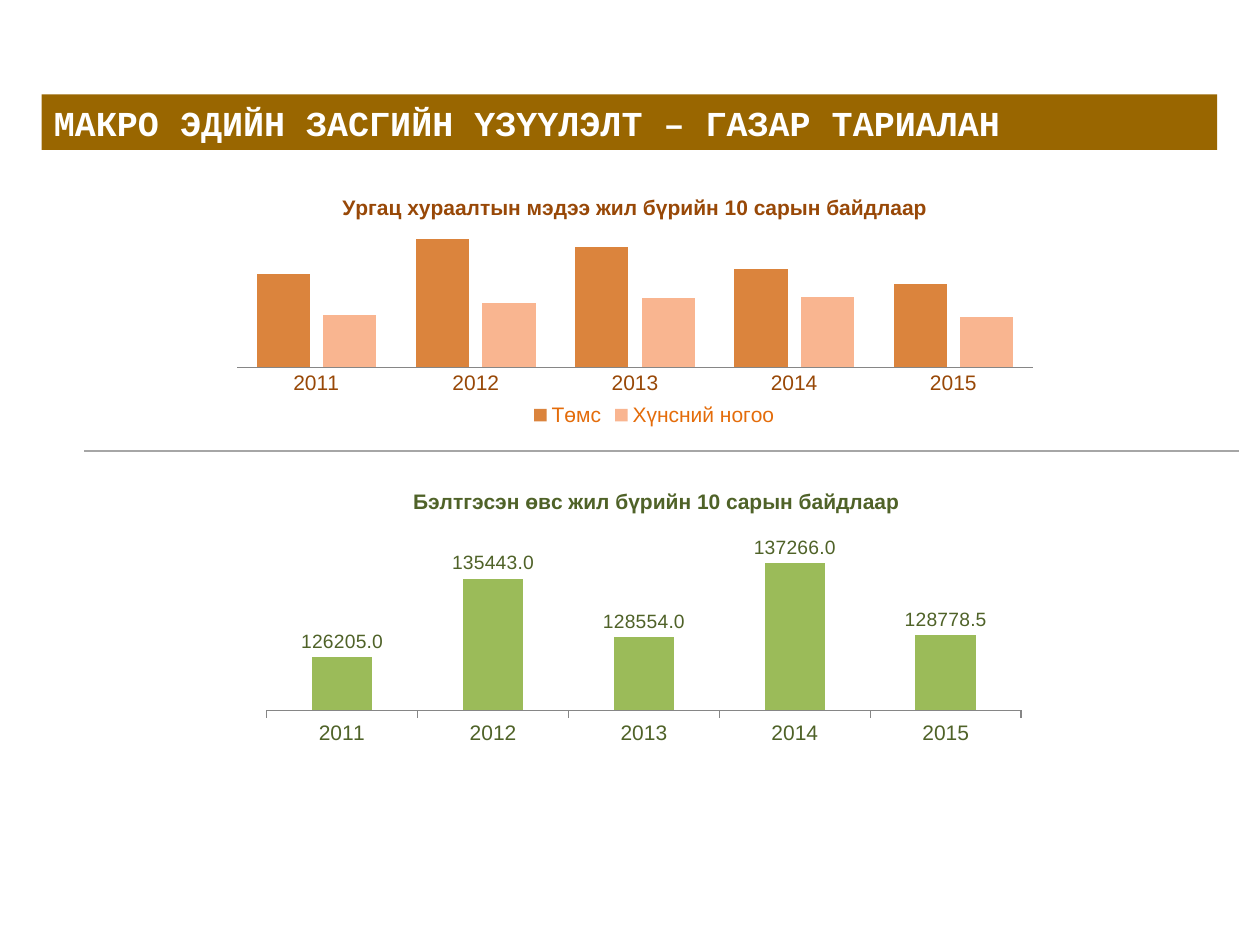
from lxml import etree
from pptx import Presentation
from pptx.chart.data import CategoryChartData
from pptx.dml.color import RGBColor
from pptx.enum.chart import (XL_CHART_TYPE, XL_LABEL_POSITION as LabelPos,
                             XL_LEGEND_POSITION as LegendPos, XL_TICK_MARK as Tick)
from pptx.enum.shapes import MSO_CONNECTOR, MSO_SHAPE
from pptx.enum.text import MSO_ANCHOR, PP_ALIGN
from pptx.oxml.ns import qn
from pptx.util import Inches, Pt

HEX = {"band": "996600", "white": "FFFFFF", "rule": "A6A6A6", "axis": "868686",
       "brown": "984807", "amber": "E46C0A", "orange": "DB843D",
       "peach": "F9B590", "olive": "4F6228", "green": "9BBB59"}
HEAD = "МАКРО ЭДИЙН ЗАСГИЙН ҮЗҮҮЛЭЛТ – ГАЗАР ТАРИАЛАН"
YEARS = ["2011", "2012", "2013", "2014", "2015"]
CHARTS = [
    {"at": (1.75, 1.42, 6.58, 2.08), "ink": "brown", "gap": 75, "lap": -25,
     "title": "Ургац хураалтын мэдээ жил бүрийн 10 сарын байдлаар",
     "plot": (0.02, 0.23, 0.96, 0.49), "range": (0, 100), "tick": Tick.NONE,
     "legend": (0.37, 0.84), "labels": False,
     "series": [("Төмс", [73, 100, 94, 77, 65], "orange"),
                ("Хүнсний ногоо", [41, 50, 54, 55, 39], "peach")]},
    {"at": (1.92, 3.75, 6.58, 2.33), "ink": "olive", "gap": 150, "lap": 0,
     "title": "Бэлтгэсэн өвс жил бүрийн 10 сарын байдлаар",
     "plot": (0.03, 0.23, 0.91, 0.58), "range": (120000, 140000),
     "tick": Tick.OUTSIDE, "legend": None, "labels": True,
     "series": [("Series 1", [126205, 135443, 128554, 137266, 128778.5], "green")]},
]


def rgb(name):
    return RGBColor.from_string(HEX[name])


def style(font, size, ink, face="Arial", bold=False):
    font.size, font.name, font.bold = Pt(size), face, bold
    font.color.rgb = rgb(ink)


def place(part, index, spot, inner=False):
    """Fix a chart part at x, y and, if given, w, h as shares of the chart."""
    for old in part.findall(qn("c:layout")):
        part.remove(old)
    layout = etree.Element(qn("c:layout"))
    manual = etree.SubElement(layout, qn("c:manualLayout"))
    tags = [("layoutTarget", "inner")] if inner else []
    tags += [("xMode", "edge"), ("yMode", "edge")]
    tags += zip("xywh", spot)
    for tag, val in tags:
        etree.SubElement(manual, qn("c:" + tag)).set("val", str(val))
    part.insert(index, layout)


def add_bars(slide, item):
    data = CategoryChartData(number_format="0.0")
    data.categories = YEARS
    for name, vals, _ in item["series"]:
        data.add_series(name, vals)
    chart = slide.shapes.add_chart(XL_CHART_TYPE.COLUMN_CLUSTERED,
                                   *map(Inches, item["at"]), data).chart
    chart.font.size, chart.font.name = Pt(18), "Calibri"
    chart.has_title = True
    run = chart.chart_title.text_frame.paragraphs[0].add_run()
    run.text = item["title"]
    style(run.font, 12, item["ink"], bold=True)
    chart.chart_title.include_in_layout = False

    cats, vals = chart.category_axis, chart.value_axis
    style(cats.tick_labels.font, 12, item["ink"])
    cats.major_tick_mark = item["tick"]
    cats.format.line.color.rgb = rgb("axis")
    vals.visible = vals.has_major_gridlines = False
    vals.minimum_scale, vals.maximum_scale = item["range"]

    plot = chart.plots[0]
    plot.gap_width, plot.overlap = item["gap"], item["lap"]
    plot.vary_by_categories = False
    for bars, (_, _, ink) in zip(plot.series, item["series"]):
        bars.format.fill.solid()
        bars.format.fill.fore_color.rgb = rgb(ink)
    if item["labels"]:
        plot.has_data_labels = True
        labels = plot.data_labels
        labels.show_value = True
        labels.number_format, labels.number_format_is_linked = "0.0", False
        labels.position = LabelPos.OUTSIDE_END
        style(labels.font, 11, item["ink"])
    place(chart._chartSpace.chart.plotArea, 0, item["plot"], inner=True)

    chart.has_legend = item["legend"] is not None
    if chart.has_legend:
        legend = chart.legend
        legend.position = LegendPos.BOTTOM
        legend.include_in_layout = False
        style(legend.font, 12, "amber")
        place(legend._element, 1, item["legend"])


def add_rule(slide):
    rule = slide.shapes.add_connector(MSO_CONNECTOR.STRAIGHT, Inches(9.83), Inches(3.58),
                                      Inches(0.67), Inches(3.58))
    rule.line.color.rgb = rgb("rule")
    rule.line.width = Pt(0.75)
    etree.SubElement(rule._element.spPr, qn("a:effectLst"))


def add_band(slide):
    band = slide.shapes.add_shape(MSO_SHAPE.RECTANGLE, Inches(0.33), Inches(0.75),
                                  Inches(9.33), Inches(0.44))
    band.shadow.inherit = False
    band.fill.solid()
    band.fill.fore_color.rgb = rgb("band")
    band.line.fill.background()
    frame = band.text_frame
    frame.word_wrap = True
    frame.vertical_anchor = MSO_ANCHOR.MIDDLE
    para = frame.paragraphs[0]
    para.alignment = PP_ALIGN.JUSTIFY
    indent = Inches(0.56)
    props = para._p.get_or_add_pPr()
    props.set("marL", str(indent))
    props.set("indent", str(-indent))
    run = para.add_run()
    run.text = HEAD
    style(run.font, 20, "white", "Courier New", True)


def main():
    deck = Presentation()
    deck.slide_width, deck.slide_height = Inches(10), Inches(7.5)
    slide = deck.slides.add_slide(deck.slide_layouts[6])
    for item in CHARTS:
        add_bars(slide, item)
    add_rule(slide)
    add_band(slide)
    deck.save("out.pptx")


if __name__ == "__main__":
    main()
